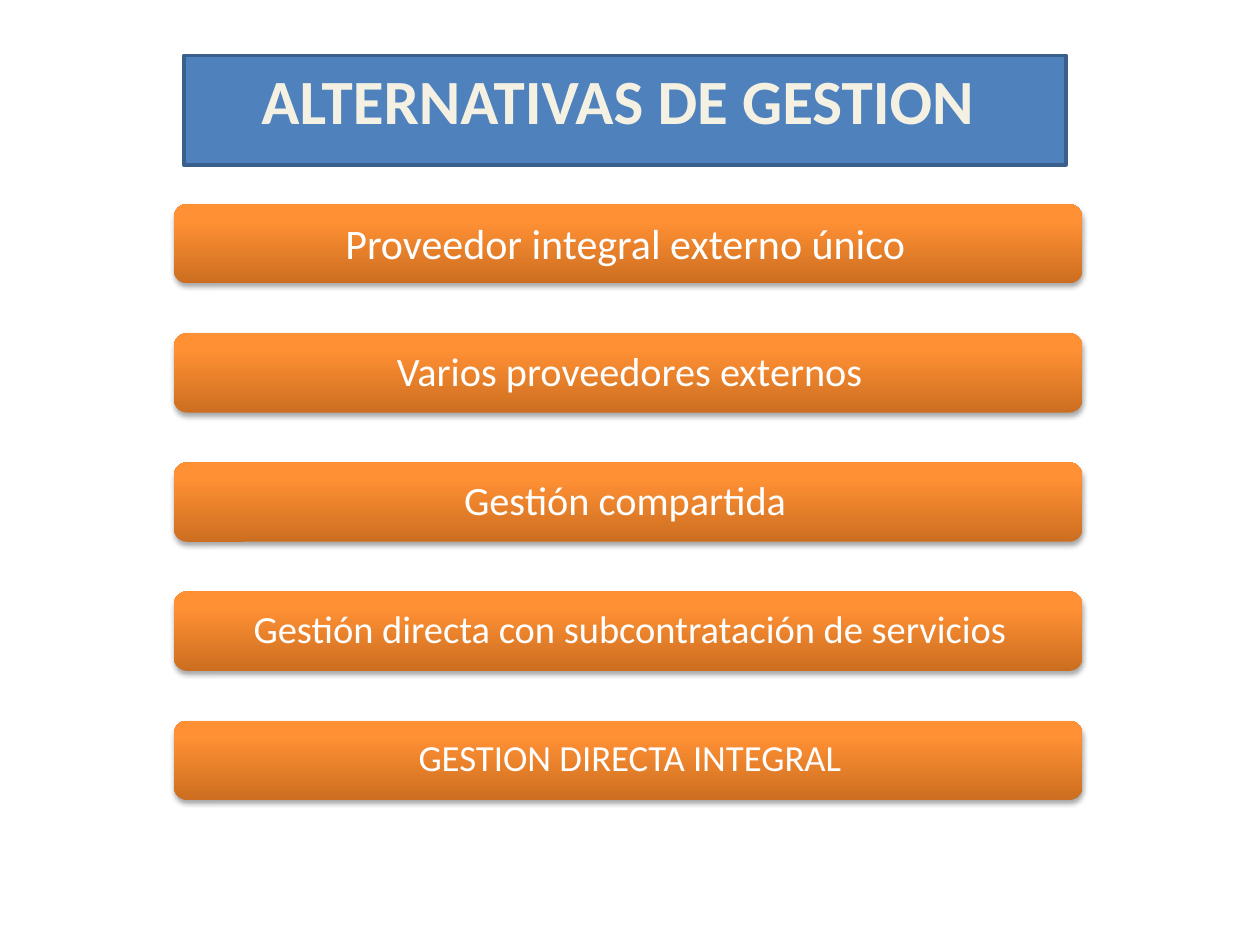
from dataclasses import dataclass

from lxml import etree
from pptx import Presentation
from pptx.dml.color import RGBColor as RGB
from pptx.enum.shapes import MSO_SHAPE as Shape
from pptx.enum.text import MSO_ANCHOR as Anchor, MSO_AUTO_SIZE as AutoSize, PP_ALIGN as Align
from pptx.oxml.ns import qn
from pptx.util import Inches, Pt

COLORS = {
    "title_fill": "4F81BD",
    "title_line": "3A5F8C",
    "title_text": "F4F1E3",
    "bar_text": "FFFFFF",
    "shadow": "000000",
}
BAR_STOPS = [(0, "CC6E20"), (80, "FF9034"), (100, "FF9136")]
FONT = "Calibri"
BAR_LEFT, BAR_TOP, BAR_WIDTH, BAR_HEIGHT = 1.38, 1.62, 7.21, 0.63
BAR_PITCH = 1.025
LABEL_CENTER = 5.0


@dataclass
class Alternative:
    text: str
    size: int
    label_width: float = 7.09


ALTERNATIVES = [
    Alternative("Proveedor integral externo único ", 24, 7.24),
    Alternative("Varios proveedores externos", 23),
    Alternative("Gestión compartida ", 23, 7.24),
    Alternative("Gestión directa con subcontratación de servicios", 22),
    Alternative("GESTION DIRECTA INTEGRAL", 21),
]


def set_text(sp, text: str, size: int, color: str, bold: bool = False):
    """Write one centred paragraph and return it."""
    tf = sp.text_frame
    tf.word_wrap = True
    tf.vertical_anchor = Anchor.TOP
    tf.text = text
    p = tf.paragraphs[0]
    p.alignment = Align.CENTER
    font = p.runs[0].font
    font.name, font.size, font.bold = FONT, Pt(size), bold
    font.color.rgb = RGB.from_string(COLORS[color])
    return p


def add_color(parent, color: str):
    return etree.SubElement(parent, qn("a:srgbClr"), val=color)


def fill_gradient(sp) -> None:
    """Shade the bar from its dark bottom edge to its light top edge."""
    sp.fill.gradient()
    sp.fill.gradient_angle = 90
    stops = sp._element.spPr.find(qn("a:gradFill")).find(qn("a:gsLst"))
    for stop in list(stops):
        stops.remove(stop)
    for position, color in BAR_STOPS:
        add_color(etree.SubElement(stops, qn("a:gs"), pos=str(position * 1000)), color)


def add_shadow(sp) -> None:
    sp.shadow.inherit = False
    effects = sp._element.spPr.find(qn("a:effectLst"))
    shadow = etree.SubElement(
        effects, qn("a:outerShdw"), blurRad=str(Pt(3.1)), dist=str(Pt(1.8)),
        dir=str(90 * 60000), rotWithShape="0")
    etree.SubElement(add_color(shadow, COLORS["shadow"]), qn("a:alpha"), val="35000")


def add_title(slide) -> None:
    sp = slide.shapes.add_shape(
        Shape.RECTANGLE, Inches(1.46), Inches(0.44), Inches(7), Inches(0.87))
    sp.shadow.inherit = False
    sp.fill.solid()
    sp.fill.fore_color.rgb = RGB.from_string(COLORS["title_fill"])
    sp.line.color.rgb = RGB.from_string(COLORS["title_line"])
    sp.line.width = Pt(2)
    p = set_text(sp, "ALTERNATIVAS DE GESTION ", 36, "title_text", bold=True)
    p.space_before = Pt(3)


def add_alternative(slide, item: Alternative, top: float) -> None:
    group = slide.shapes.add_group_shape()
    bar = group.shapes.add_shape(
        Shape.ROUNDED_RECTANGLE, Inches(BAR_LEFT), Inches(top),
        Inches(BAR_WIDTH), Inches(BAR_HEIGHT))
    fill_gradient(bar)
    bar.line.fill.background()
    add_shadow(bar)

    label = group.shapes.add_textbox(
        Inches(LABEL_CENTER - item.label_width / 2), Inches(top + 0.1),
        Inches(item.label_width), Inches(0.1 + 0.015 * item.size))
    p = set_text(label, item.text, item.size, "bar_text")
    p.line_spacing = 0.9
    label.text_frame.auto_size = AutoSize.SHAPE_TO_FIT_TEXT


def main() -> None:
    prs = Presentation()
    prs.slide_width, prs.slide_height = Inches(10), Inches(7.5)
    slide = prs.slides.add_slide(prs.slide_layouts[6])
    add_title(slide)
    for row, item in enumerate(ALTERNATIVES):
        add_alternative(slide, item, BAR_TOP + row * BAR_PITCH)
    prs.save("out.pptx")


if __name__ == "__main__":
    main()
